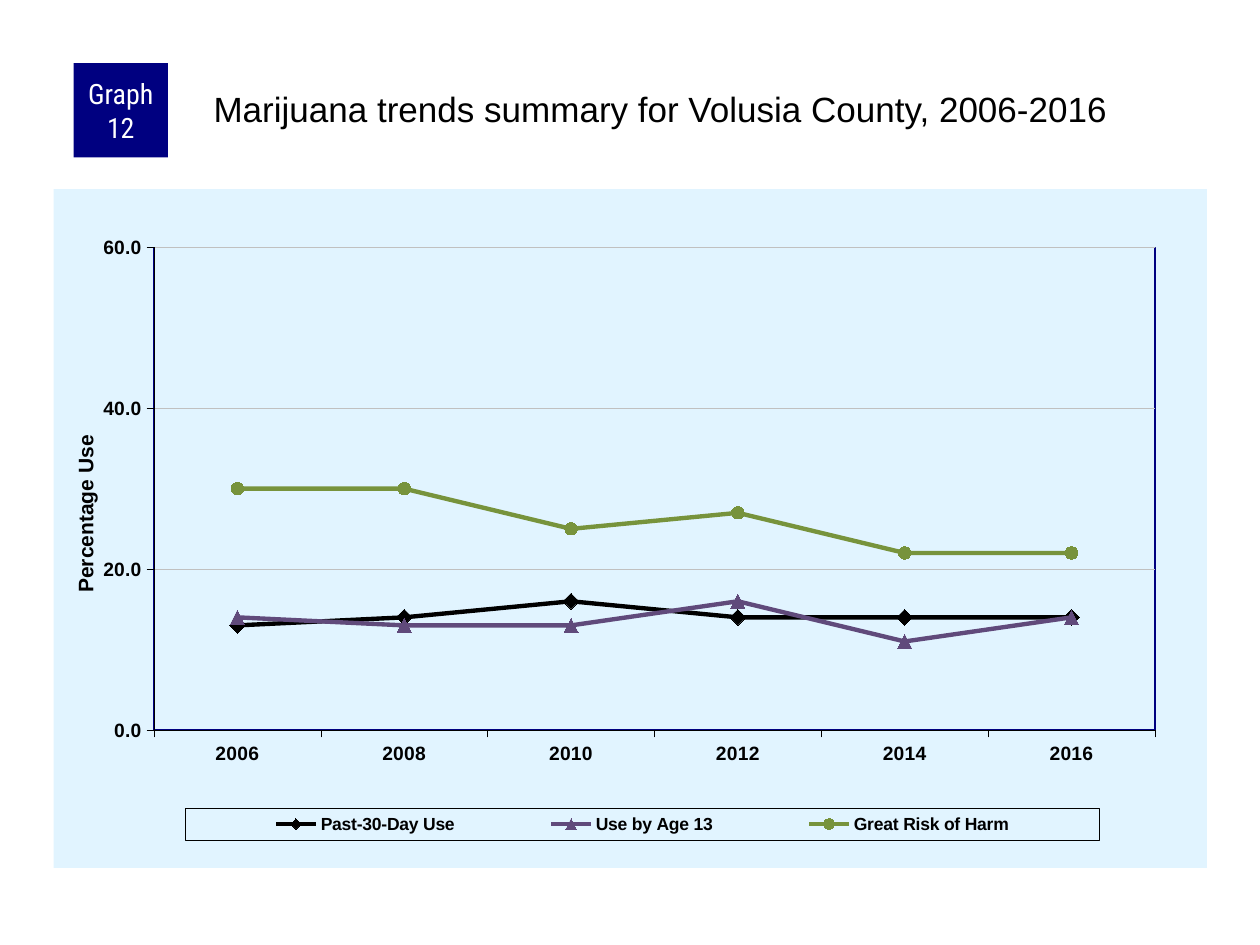
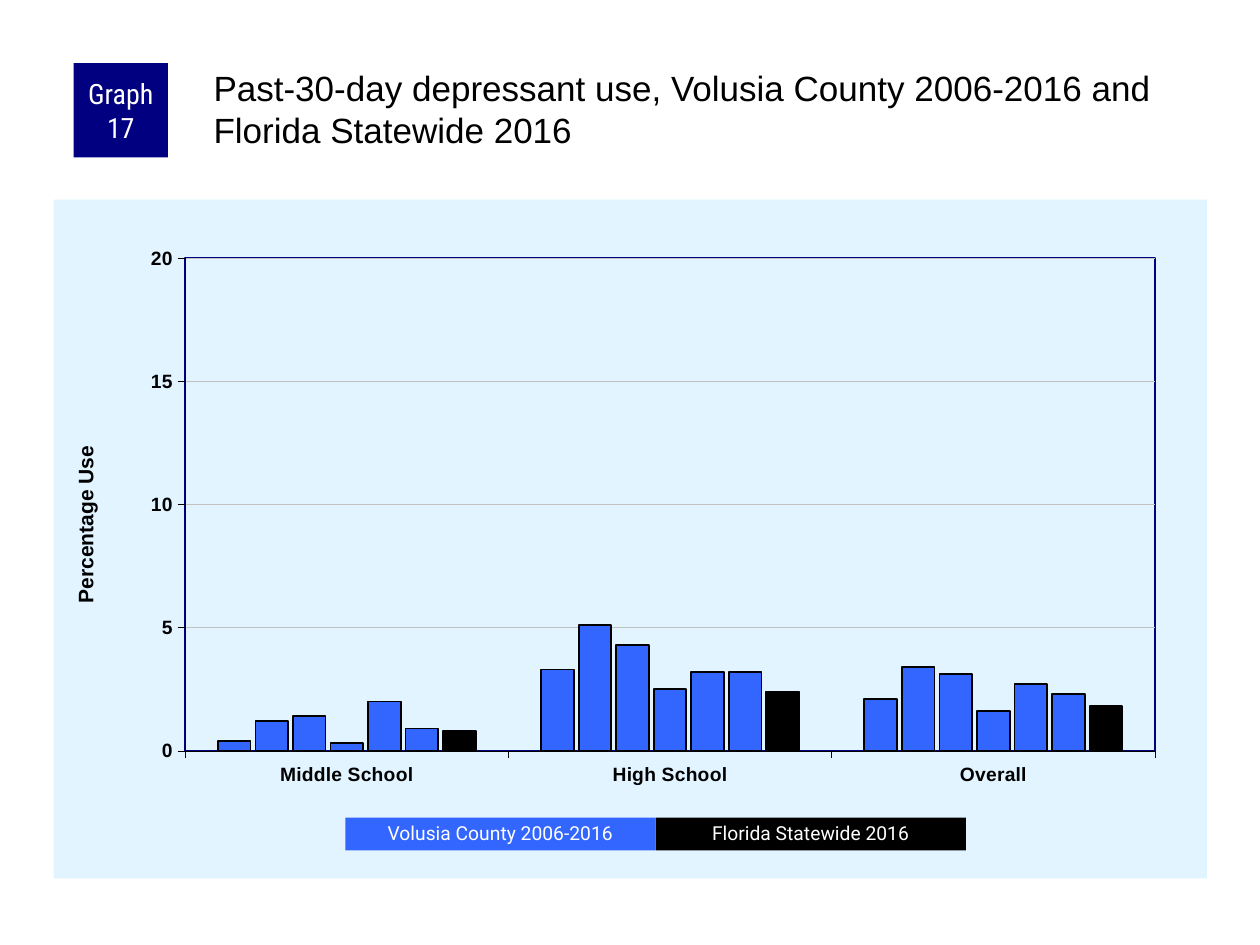
import pptx
import pptx.chart.data
import pptx.dml.color
import pptx.enum.chart
import pptx.enum.shapes
import pptx.enum.text
import pptx.oxml
import pptx.oxml.ns
import pptx.util

Pt = pptx.util.Pt
MARKER = pptx.enum.chart.XL_MARKER_STYLE
CHART_TYPE = pptx.enum.chart.XL_CHART_TYPE

COLORS = {
    "navy": "000080", "panel": "E1F4FF", "black": "000000", "white": "FFFFFF",
    "grid": "C0C0C0", "blue": "3366FF", "purple": "604A7B", "green": "77933C",
}

TRENDS = {
    "badge": "Graph 12",
    "title": "Marijuana trends summary for Volusia County, 2006-2016",
    "title_top": 48,
    "chart_top": 108,
    "type": CHART_TYPE.LINE_MARKERS,
    "categories": ["2006", "2008", "2010", "2012", "2014", "2016"],
    "series": [
        ("Past-30-Day Use", [13, 14, 16, 14, 14, 14], "black"),
        ("Use by Age 13", [14, 13, 13, 16, 11, 14], "purple"),
        ("Great Risk of Harm", [30, 30, 25, 27, 22, 22], "green"),
    ],
    "scale": (60, 20, "0.0"),
    "plot": (0.087, 0.086, 0.868, 0.711),
}
MARKERS = [(MARKER.DIAMOND, 9), (MARKER.TRIANGLE, 8), (MARKER.CIRCLE, 7)]

DEPRESSANTS = {
    "badge": "Graph 17",
    "title": "Past-30-day depressant use, Volusia County 2006-2016 and Florida Statewide 2016",
    "title_top": 36,
    "chart_top": 114,
    "type": CHART_TYPE.COLUMN_CLUSTERED,
    "categories": ["Middle School", "High School", "Overall"],
    "series": [
        ("Series 1", [0.4, 3.3, 2.1], "blue"),
        ("Series 2", [1.2, 5.1, 3.4], "blue"),
        ("Series 3", [1.4, 4.3, 3.1], "blue"),
        ("Series 4", [0.3, 2.5, 1.6], "blue"),
        ("Series 5", [2.0, 3.2, 2.7], "blue"),
        ("Series 6", [0.9, 3.2, 2.3], "blue"),
        ("Series 7", [0.8, 2.4, 1.8], "black"),
    ],
    "scale": (20, 5, "0"),
    "plot": (0.114, 0.086, 0.841, 0.726),
}
KEYS = [("Volusia County 2006-2016", "blue"), ("Florida Statewide 2016", "black")]


def rgb(name):
    return pptx.dml.color.RGBColor.from_string(COLORS[name])


def style_font(font, name, size, color, bold=False):
    font.name, font.size, font.bold = name, Pt(size), bold
    font.color.rgb = rgb(color)


def style_line(line, color, width):
    line.color.rgb = rgb(color)
    line.width = Pt(width)


def place_part(part, index, x, y, width=None, height=None):
    for old in part.findall(pptx.oxml.ns.qn("c:layout")):
        part.remove(old)
    inner = '<c:layoutTarget val="inner"/>' if part.tag.endswith("plotArea") else ""
    sizes = [("w", width), ("h", height)] if width else []
    modes = '<c:xMode val="edge"/><c:yMode val="edge"/>'
    values = "".join(f'<c:{key} val="{value}"/>' for key, value in [("x", x), ("y", y)] + sizes)
    part.insert(index, pptx.oxml.parse_xml(
        f'<c:layout {pptx.oxml.ns.nsdecls("c")}><c:manualLayout>{inner}{modes}{values}'
        "</c:manualLayout></c:layout>"))


def area_style(fill=None, line=None, width=0):
    def solid(name):
        if not name:
            return "<a:noFill/>"
        return f'<a:solidFill><a:srgbClr val="{COLORS[name]}"/></a:solidFill>'

    return pptx.oxml.parse_xml(
        f'<c:spPr {pptx.oxml.ns.nsdecls("c", "a")}>{solid(fill)}'
        f'<a:ln w="{int(Pt(width))}">{solid(line)}</a:ln></c:spPr>')


def add_block(page, text, box, fill, font_name, size, margin, spacing=None):
    block = page.shapes.add_shape(
        pptx.enum.shapes.MSO_SHAPE.RECTANGLE, *(Pt(value) for value in box))
    block.shadow.inherit = False
    block.fill.solid()
    block.fill.fore_color.rgb = rgb(fill)
    block.line.fill.background()
    frame = block.text_frame
    frame.word_wrap = True
    frame.margin_left = frame.margin_right = Pt(margin)
    frame.margin_top = frame.margin_bottom = 0
    frame.vertical_anchor = pptx.enum.text.MSO_ANCHOR.MIDDLE
    frame.text = text
    para = frame.paragraphs[0]
    para.alignment = pptx.enum.text.PP_ALIGN.CENTER
    para.line_spacing = spacing
    style_font(para.runs[0].font, font_name, size, "white")


def add_heading(page, content):
    title = page.shapes.title
    title.left, title.top = Pt(120), Pt(content["title_top"])
    title.width, title.height = Pt(570), Pt(60)
    frame = title.text_frame
    frame.text = content["title"]
    frame.word_wrap = True
    frame.auto_size = pptx.enum.text.MSO_AUTO_SIZE.NONE
    frame.vertical_anchor = pptx.enum.text.MSO_ANCHOR.TOP
    frame.margin_left = frame.margin_top = Pt(2)
    frame.margin_right = frame.margin_bottom = 0
    para = frame.paragraphs[0]
    para.alignment = pptx.enum.text.PP_ALIGN.LEFT
    style_font(para.runs[0].font, "Arial", 20, "black")
    add_block(page, content["badge"], (42, 36, 54, 54), "navy", "Roboto Condensed", 16, 3.6)


def add_graph(page, content):
    data = pptx.chart.data.CategoryChartData(number_format="0.0")
    data.categories = content["categories"]
    for name, values, _ in content["series"]:
        data.add_series(name, values)
    chart = page.shapes.add_chart(
        content["type"], Pt(30.7), Pt(content["chart_top"]), Pt(659), Pt(388), data).chart
    chart.has_title = False
    chart.has_legend = False
    style_font(chart.font, "Arial", 8, "black")
    chart.plots[0].vary_by_categories = False

    for axis in (chart.category_axis, chart.value_axis):
        axis.major_tick_mark = pptx.enum.chart.XL_TICK_MARK.OUTSIDE
        axis.minor_tick_mark = pptx.enum.chart.XL_TICK_MARK.NONE
        style_font(axis.tick_labels.font, "Arial", 11, "black", True)
        style_line(axis.format.line, "black", 0.25)

    axis = chart.value_axis
    axis.minimum_scale = 0
    axis.maximum_scale, axis.major_unit, axis.tick_labels.number_format = content["scale"]
    axis.tick_labels.number_format_is_linked = False
    axis.has_major_gridlines = True
    style_line(axis.major_gridlines.format.line, "grid", 0.25)
    frame = axis.axis_title.text_frame
    frame.text = "Percentage Use"
    style_font(frame.paragraphs[0].runs[0].font, "Arial", 12, "black", True)
    frame._txBody.bodyPr.set("rot", "-5400000")
    frame._txBody.bodyPr.set("vert", "horz")
    place_part(axis.axis_title._element, 1, 0.013, 0.357)

    chart_root = chart._chartSpace
    chart_root.chart.addnext(area_style("panel"))
    plot_area = chart_root.chart.plotArea
    place_part(plot_area, 0, *content["plot"])
    plot_area.append(area_style(line="navy", width=1))
    return chart


def style_trends(chart):
    for series, (_, _, color), (style, size) in zip(
            chart.plots[0].series, TRENDS["series"], MARKERS):
        series.smooth = False
        style_line(series.format.line, color, 2.5)
        series.marker.style, series.marker.size = style, size
        series.marker.format.fill.solid()
        series.marker.format.fill.fore_color.rgb = rgb(color)
        style_line(series.marker.format.line, color, 0.75)
    chart.has_legend = True
    legend = chart.legend
    legend.position = pptx.enum.chart.XL_LEGEND_POSITION.BOTTOM
    legend.include_in_layout = False
    style_font(legend.font, "Arial", 10, "black", True)
    place_part(legend._element, 1, 0.114, 0.912, 0.793, 0.047)
    legend._element.find(pptx.oxml.ns.qn("c:overlay")).addnext(
        area_style(line="black", width=0.25))


def style_depressants(chart):
    plot = chart.plots[0]
    plot.gap_width, plot.overlap = 200, -15
    for series, (_, _, color) in zip(plot.series, DEPRESSANTS["series"]):
        series.invert_if_negative = False
        series.format.fill.solid()
        series.format.fill.fore_color.rgb = rgb(color)
        style_line(series.format.line, "black", 1)


def main():
    deck = pptx.Presentation()
    deck.slide_width, deck.slide_height = Pt(720), Pt(540)
    for content, style_chart in ((TRENDS, style_trends), (DEPRESSANTS, style_depressants)):
        page = deck.slides.add_slide(deck.slide_layouts[5])
        add_heading(page, content)
        style_chart(add_graph(page, content))
    key_width = 177.3
    for index, (text, color) in enumerate(KEYS):
        add_block(page, text, (197.3 + index * key_width, 467.3, key_width, 18.7),
                  color, "Roboto", 11, 7.2, 0.9)
    deck.save("out.pptx")


if __name__ == "__main__":
    main()
